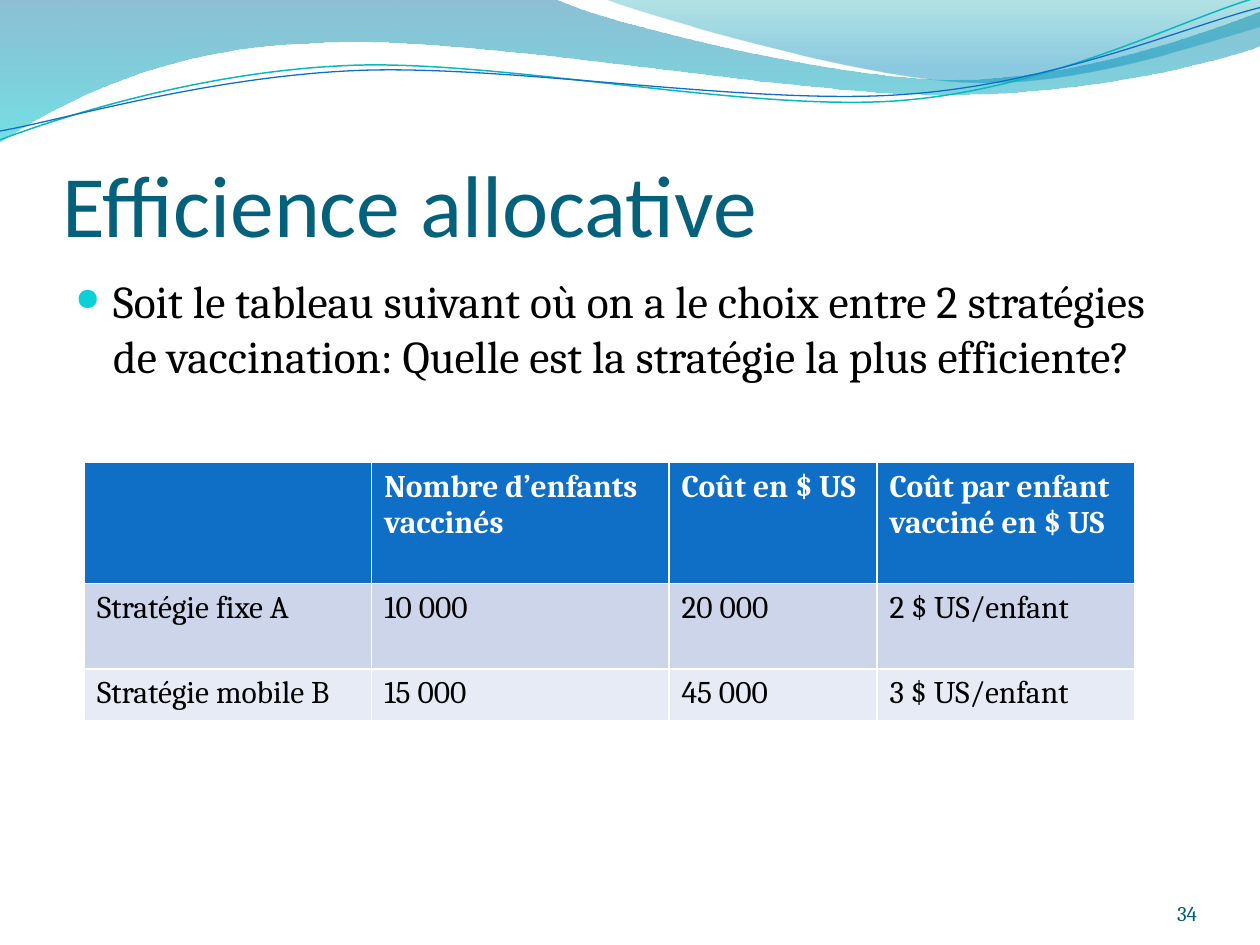
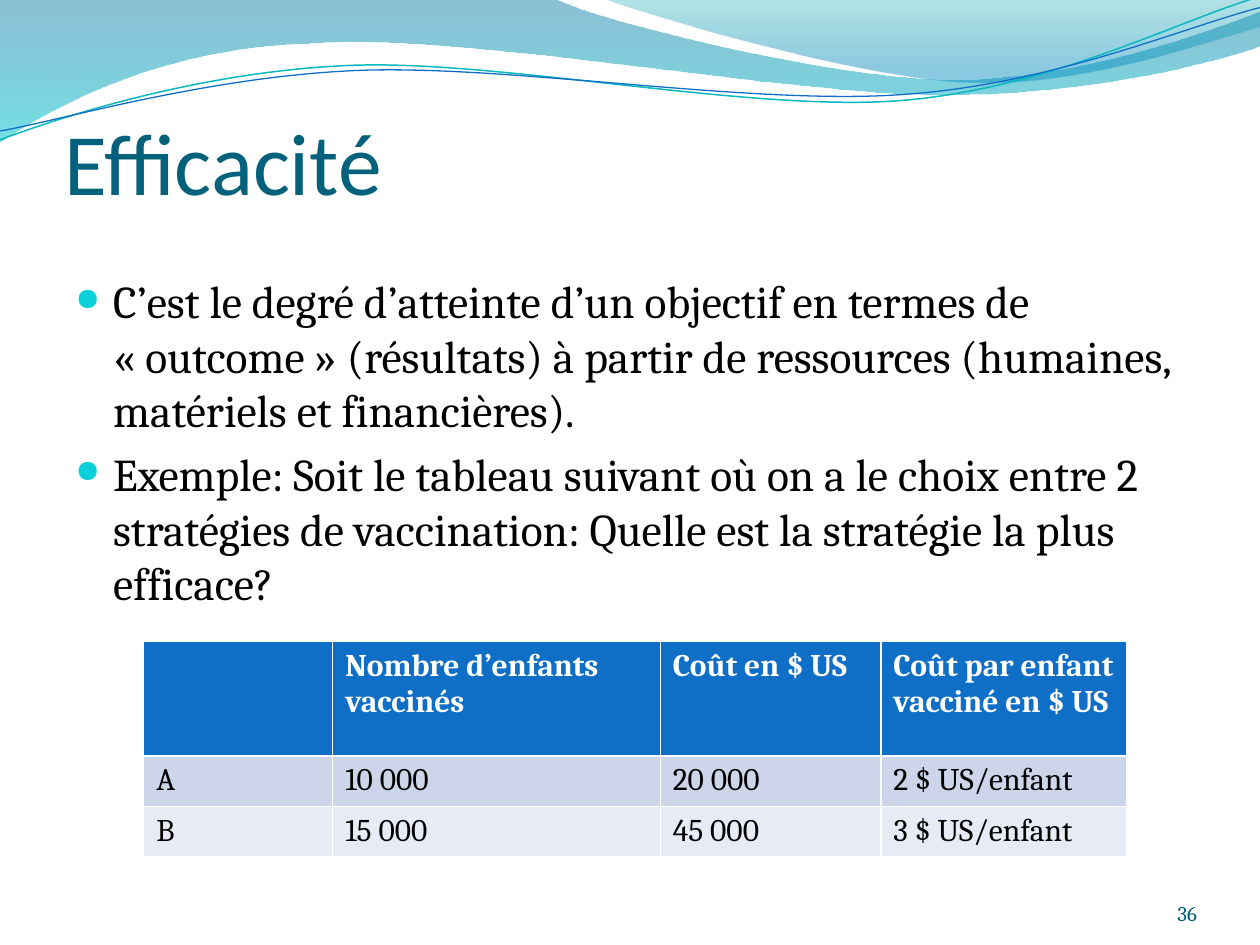
import pptx
import pptx.util
import pptx.dml.color
import pptx.enum.text
import pptx.oxml
import pptx.oxml.ns

Inches, Pt = pptx.util.Inches, pptx.util.Pt
RGB = pptx.dml.color.RGBColor.from_string
ANCHOR = pptx.enum.text.MSO_ANCHOR
ALIGN = pptx.enum.text.PP_ALIGN
NS = pptx.oxml.ns.nsdecls("a")
qn = pptx.oxml.ns.qn

COLORS = {
    "title": "04617B", "body": "000000", "number": "045D75", "bullet": "0BD0D9",
    "header": "0F6FC6", "row_a": "CCD5EA", "row_b": "E7EBF5", "white": "FFFFFF",
    "teal_line": "0AB8BF", "blue_line": "0F6FC6",
    "wave_top": "0074A1", "wave_bottom": "00C6CF", "crest_top": "00A1A9", "crest_bottom": "008BBF",
}

# Waves: start point, then Bézier segments (six numbers) or straight ones (two);
# gradient stops are position, colour, opacity in percent
WAVES = [
    {"curve": [(0, 0), (4.4, -0.01), (4.76, 0.17, 6.64, 0.63, 7.58, 0.63),
               (8.53, 0.63, 9.58, 0.26, 10, 0.09), (10.01, 0.36),
               (9.83, 0.44, 8.7, 0.76, 7.46, 0.75), (6.22, 0.75, 3.82, 0.28, 2.57, 0.34),
               (1.29, 0.36, 0.46, 0.83, -0.01, 1.13)],
     "stops": [(0, "wave_top", 45), (1, "wave_bottom", 55)]},
    {"curve": [(4.79, -0.01), (5.09, 0.11, 6.82, 0.62, 7.69, 0.65),
               (8.56, 0.69, 9.61, 0.32, 10, 0.21), (10, 0)],
     "stops": [(0, "crest_top", 30), (0.8, "crest_bottom", 45)]},
    {"curve": [(0, 1.11), (0.48, 0.93, 1.58, 0.57, 2.77, 0.52),
               (3.95, 0.47, 5.93, 0.89, 7.13, 0.8), (8.33, 0.71, 9.38, 0.15, 9.98, -0.02)],
     "line": ("teal_line", 0.85)},
    {"curve": [(0, 1.04), (0.47, 0.96, 1.64, 0.61, 2.83, 0.56),
               (4.03, 0.51, 5.97, 0.84, 7.17, 0.75), (8.36, 0.67, 9.41, 0.21, 10, 0.06)],
     "line": ("blue_line", 0.75)},
]

HEADINGS = ["", "Nombre d’enfants vaccinés", "Coût en $ US", "Coût par enfant vacciné en $ US"]
RESULTS = [["10 000", "20 000", "2 $ US/enfant"], ["15 000", "45 000", "3 $ US/enfant"]]

SLIDES = [
    {"title": "Efficience allocative", "title_at": (0.5, 0.77), "number": "34",
     "points": ["Soit le tableau suivant où on a le choix entre 2 stratégies de vaccination: "
                "Quelle est la stratégie la plus efficiente?"],
     "strategies": ["Stratégie fixe A", "Stratégie mobile B"],
     "table_at": (0.67, 3.67), "columns": [2.28, 2.36, 1.65, 2.05], "rows": [0.96, 0.68, 0.41]},
    {"title": "Efficacité", "title_at": (0.51, 0.44), "number": "36",
     "points": ["C’est le degré d’atteinte d’un objectif en termes de « outcome » (résultats) "
                "à partir de ressources (humaines, matériels et financières).",
                "Exemple: Soit le tableau suivant où on a le choix entre 2 stratégies de "
                "vaccination: Quelle est la stratégie la plus efficace?"],
     "strategies": ["A", "B"],
     "table_at": (1.14, 5.09), "columns": [1.5, 2.6, 1.75, 1.95], "rows": [0.91, 0.38, 0.38]},
]
# French quotation marks hold their word with a no-break space
NO_BREAK = chr(160)


def style(paragraph, font, size, color, bold=False):
    paragraph.font.name = font
    paragraph.font.size = Pt(size)
    paragraph.font.bold = bold
    paragraph.font.color.rgb = RGB(COLORS[color])


def add_frame(slide, left, top, width, height, anchor, insets):
    box = slide.shapes.add_textbox(Inches(left), Inches(top), Inches(width), Inches(height))
    frame = box.text_frame
    frame.word_wrap = True
    frame.vertical_anchor = anchor
    frame.margin_left, frame.margin_top, frame.margin_right, frame.margin_bottom = map(Inches, insets)
    return frame


deck = pptx.Presentation()
deck.slide_width, deck.slide_height = Inches(10), Inches(7.5)

for content in SLIDES:
    slide = deck.slides.add_slide(deck.slide_layouts[6])

    # Waves along the top
    for wave in WAVES:
        start, *segments = wave["curve"]
        builder = slide.shapes.build_freeform(Inches(start[0]), Inches(start[1]))
        builder.add_line_segments([(Inches(s[-2]), Inches(s[-1])) for s in segments],
                                  close="stops" in wave)
        ribbon = builder.convert_to_shape()
        ribbon.shadow.inherit = False

        # Bend the straight steps into Bézier curves
        steps = list(ribbon._element.iter(qn("a:lnTo")))
        for step, segment in zip(steps, segments):
            if len(segment) == 6:
                points = "".join(
                    f'<a:pt x="{Inches(x) - ribbon.left}" y="{Inches(y) - ribbon.top}"/>'
                    for x, y in zip(segment[::2], segment[1::2]))
                step.getparent().replace(step, pptx.oxml.parse_xml(
                    f"<a:cubicBezTo {NS}>{points}</a:cubicBezTo>"))

        if "stops" in wave:
            ribbon.line.fill.background()
            ribbon.fill.gradient()
            ribbon.fill.gradient_angle = 270
            for stop, (position, color, opacity) in zip(ribbon.fill.gradient_stops, wave["stops"]):
                stop.position = position
                stop.color.rgb = RGB(COLORS[color])
            tints = ribbon._element.spPr.iter(qn("a:srgbClr"))
            for tint, (position, color, opacity) in zip(list(tints), wave["stops"]):
                tint.append(pptx.oxml.parse_xml(f'<a:alpha {NS} val="{opacity * 1000}"/>'))
        else:
            color, width = wave["line"]
            ribbon.fill.background()
            ribbon.line.color.rgb = RGB(COLORS[color])
            ribbon.line.width = Pt(width)

    # Title
    title = add_frame(slide, *content["title_at"], 9, 1.25, ANCHOR.BOTTOM, (0, 0.05, 0, 0))
    title.text = content["title"]
    style(title.paragraphs[0], "Calibri", 50, "title")

    # Bulleted text
    body = add_frame(slide, 0.5, 2.12, 9, 4.8, ANCHOR.TOP, (0.1, 0.05, 0.1, 0.05))
    text = "\n".join(content["points"])
    body.text = text.replace("« ", "«" + NO_BREAK).replace(" »", NO_BREAK + "»")
    for point in body.paragraphs:
        point.space_before = Pt(5.2)
        properties = point._p.get_or_add_pPr()
        properties.set("marL", str(Inches(0.3)))
        properties.set("indent", str(Inches(-0.3)))
        for bullet in (f'<a:buClr {NS}><a:srgbClr val="{COLORS["bullet"]}"/></a:buClr>',
                       f'<a:buSzPct {NS} val="69000"/>',
                       f'<a:buChar {NS} char="●"/>'):
            properties.append(pptx.oxml.parse_xml(bullet))
        style(point, "Cambria", 26, "body")

    # Slide number
    number = add_frame(slide, 8.67, 6.95, 0.83, 0.4, ANCHOR.BOTTOM, (0, 0, 0, 0))
    number.text = content["number"]
    number.paragraphs[0].alignment = ALIGN.RIGHT
    style(number.paragraphs[0], "Cambria", 12, "number")

    # Table of strategies; its white rules come from the default table style
    left, top = content["table_at"]
    table = slide.shapes.add_table(
        3, 4, Inches(left), Inches(top),
        Inches(sum(content["columns"])), Inches(sum(content["rows"]))).table
    for column, width in zip(table.columns, content["columns"]):
        column.width = Inches(width)
    for row, height in zip(table.rows, content["rows"]):
        row.height = Inches(height)
    lines = [HEADINGS] + [[name] + result for name, result in zip(content["strategies"], RESULTS)]
    for r, (line, fill) in enumerate(zip(lines, ("header", "row_a", "row_b"))):
        for c, text in enumerate(line):
            cell = table.cell(r, c)
            cell.fill.solid()
            cell.fill.fore_color.rgb = RGB(COLORS[fill])
            if text:
                cell.text = text
                style(cell.text_frame.paragraphs[0], "Cambria", 18,
                      "body" if r else "white", bold=r == 0)

deck.save("out.pptx")
